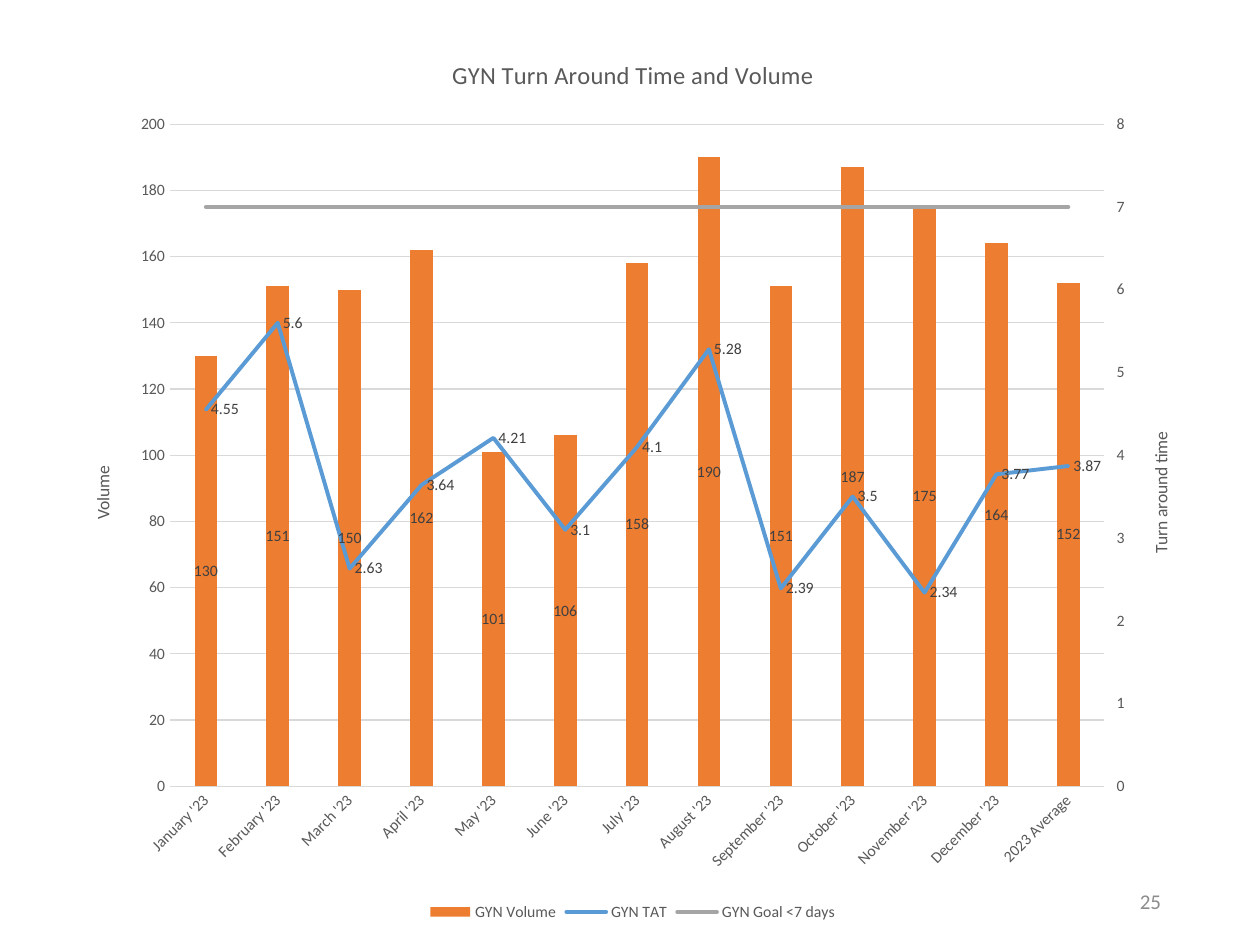
from copy import deepcopy

from lxml import etree
from pptx import Presentation
from pptx.chart.axis import ValueAxis
from pptx.chart.data import CategoryChartData
from pptx.dml.color import RGBColor
from pptx.enum.chart import XL_CHART_TYPE as CT, XL_LABEL_POSITION as LP
from pptx.enum.chart import XL_LEGEND_POSITION, XL_MARKER_STYLE, XL_TICK_MARK as TM
from pptx.enum.text import MSO_ANCHOR, PP_ALIGN
from pptx.oxml.ns import qn
from pptx.util import Pt

FONT = "Calibri"
COLORS = {
    "volume": "ED7D31", "tat": "5B9BD5", "goal": "A5A5A5", "grid": "D9D9D9",
    "text": "595959", "label": "404040", "number": "8C8C8C",
}
MONTHS = ["January", "February", "March", "April", "May", "June", "July",
          "August", "September", "October", "November", "December"]
VOLUME = [130, 151, 150, 162, 101, 106, 158, 190, 151, 187, 175, 164, 152]
TAT = [4.55, 5.6, 2.63, 3.64, 4.21, 3.1, 4.1, 5.28, 2.39, 3.5, 2.34, 3.77, 3.87]
GOAL = 7


def rgb(name):
    return RGBColor.from_string(COLORS[name])


def style_font(font, size=9, color="text"):
    font.name = FONT
    font.size = Pt(size)
    font.bold = False
    font.color.rgb = rgb(color)


def add_text(tf, text, size=10, color="text", align=None):
    p = tf.paragraphs[0]
    p.alignment = align
    r = p.add_run()
    r.text = text
    style_font(r.font, size, color)


def sub(parent, tag, **attrs):
    return etree.SubElement(parent, qn(tag), attrs)


def make_layout(**places):
    layout = etree.Element(qn("c:layout"))
    manual = sub(layout, "c:manualLayout")
    if "w" in places:
        sub(manual, "c:layoutTarget", val="inner")
    for side in ("x", "y"):
        sub(manual, f"c:{side}Mode", val="edge")
    for key, value in places.items():
        sub(manual, f"c:{key}", val=str(value))
    return layout


def drop(parent, tag):
    for el in parent.findall(qn(tag)):
        parent.remove(el)


def place_title(title, text, x, y, size=10, rotation=None):
    tf = title.text_frame
    add_text(tf, text, size)
    if rotation:
        body = tf._txBody.find(qn("a:bodyPr"))
        body.set("rot", str(rotation * 60000))
        body.set("vert", "horz")
    el = title._element
    drop(el, "c:layout")
    el.find(qn("c:tx")).addnext(make_layout(x=x, y=y))


def split_value_axes(chart):
    area = chart._chartSpace.find(".//" + qn("c:plotArea"))
    bar, cat, val = (area.find(qn(f"c:{t}")) for t in ("barChart", "catAx", "valAx"))
    line = etree.Element(qn("c:lineChart"))
    sub(line, "c:grouping", val="standard")
    sub(line, "c:varyColors", val="0")
    for ser in bar.findall(qn("c:ser"))[1:]:
        drop(ser, "c:invertIfNegative")
        line.append(ser)
    sub(line, "c:marker", val="1")
    cat2, val2 = deepcopy(cat), deepcopy(val)
    for axis, own, other in ((cat2, "5001", "5002"), (val2, "5002", "5001")):
        axis.find(qn("c:axId")).set("val", own)
        axis.find(qn("c:crossAx")).set("val", other)
        sub(line, "c:axId", val=own)
    cat2.find(qn("c:delete")).set("val", "1")
    val2.find(qn("c:axPos")).set("val", "r")
    val2.find(qn("c:crosses")).set("val", "max")
    drop(val2, "c:majorGridlines")
    bar.addnext(line)
    val.addnext(val2)
    val2.addnext(cat2)
    drop(area, "c:layout")
    area.insert(0, make_layout(x=0.092, y=0.105, w=0.824, h=0.739))
    return ValueAxis(val), ValueAxis(val2)


def format_value_axis(axis, top, step, tick):
    axis.minimum_scale, axis.maximum_scale, axis.major_unit = 0, top, step
    axis.major_tick_mark, axis.minor_tick_mark = tick, TM.NONE
    axis.format.line.fill.background()
    style_font(axis.tick_labels.font)


def format_category_axis(axis):
    axis.major_tick_mark = axis.minor_tick_mark = TM.NONE
    axis.format.line.color.rgb = rgb("grid")
    axis.format.line.width = Pt(0.75)
    style_font(axis.tick_labels.font)
    body = axis._element.find(qn("c:txPr")).find(qn("a:bodyPr"))
    body.set("rot", str(-45 * 60000))
    body.set("vert", "horz")


def add_labels(series, position):
    labels = series.data_labels
    labels.show_value = True
    labels.position = position
    style_font(labels.font, 9, "label")


def format_line(series, color):
    series.smooth = False
    series.marker.style = XL_MARKER_STYLE.NONE
    series.format.line.color.rgb = rgb(color)
    series.format.line.width = Pt(2.25)
    series.format.line._get_or_add_ln().set("cap", "rnd")


def add_volume_chart(slide, x, y, w, h):
    data = CategoryChartData()
    data.categories = [f"{m} '23" for m in MONTHS] + ["2023 Average"]
    data.add_series("GYN Volume", VOLUME)
    data.add_series("GYN TAT", TAT)
    data.add_series("GYN Goal <7 days", [GOAL] * len(TAT))
    chart = slide.shapes.add_chart(CT.COLUMN_CLUSTERED, x, y, w, h, data).chart
    chart.font.name, chart.font.size = FONT, Pt(10)
    left_axis, right_axis = split_value_axes(chart)
    columns, lines = chart.plots

    columns.gap_width, columns.overlap = 219, -27
    columns.vary_by_categories = False
    volume = columns.series[0]
    volume.format.fill.solid()
    volume.format.fill.fore_color.rgb = rgb("volume")
    add_labels(volume, LP.CENTER)
    tat, goal = lines.series
    format_line(tat, "tat")
    add_labels(tat, LP.RIGHT)
    format_line(goal, "goal")

    format_category_axis(chart.category_axis)
    format_value_axis(left_axis, 200, 20, TM.NONE)
    format_value_axis(right_axis, 8, 1, TM.OUTSIDE)
    grid = left_axis.major_gridlines.format.line
    grid.color.rgb, grid.width = rgb("grid"), Pt(0.75)

    chart.has_title = True
    place_title(chart.chart_title, "GYN Turn Around Time and Volume", 0.337, 0.026, 14)
    place_title(left_axis.axis_title, "Volume", 0.02, 0.483, rotation=-90)
    place_title(right_axis.axis_title, "Turn around time", 0.953, 0.445, rotation=-90)
    chart.has_legend = True
    chart.legend.position = XL_LEGEND_POSITION.BOTTOM
    chart.legend.include_in_layout = False
    style_font(chart.legend.font)


def add_page_number(slide, text, x, y, w, h):
    tf = slide.shapes.add_textbox(x, y, w, h).text_frame
    tf.word_wrap = True
    tf.vertical_anchor = MSO_ANCHOR.MIDDLE
    add_text(tf, text, 12, "number", PP_ALIGN.RIGHT)


def main():
    prs = Presentation()
    prs.slide_width, prs.slide_height = Pt(720), Pt(540)
    s = prs.slides.add_slide(prs.slide_layouts[6])
    add_page_number(s, "25", Pt(508.5), Pt(500.5), Pt(162), Pt(28.75))
    add_volume_chart(s, Pt(37.5), Pt(17.25), Pt(648), Pt(512))
    prs.save("out.pptx")


if __name__ == "__main__":
    main()
